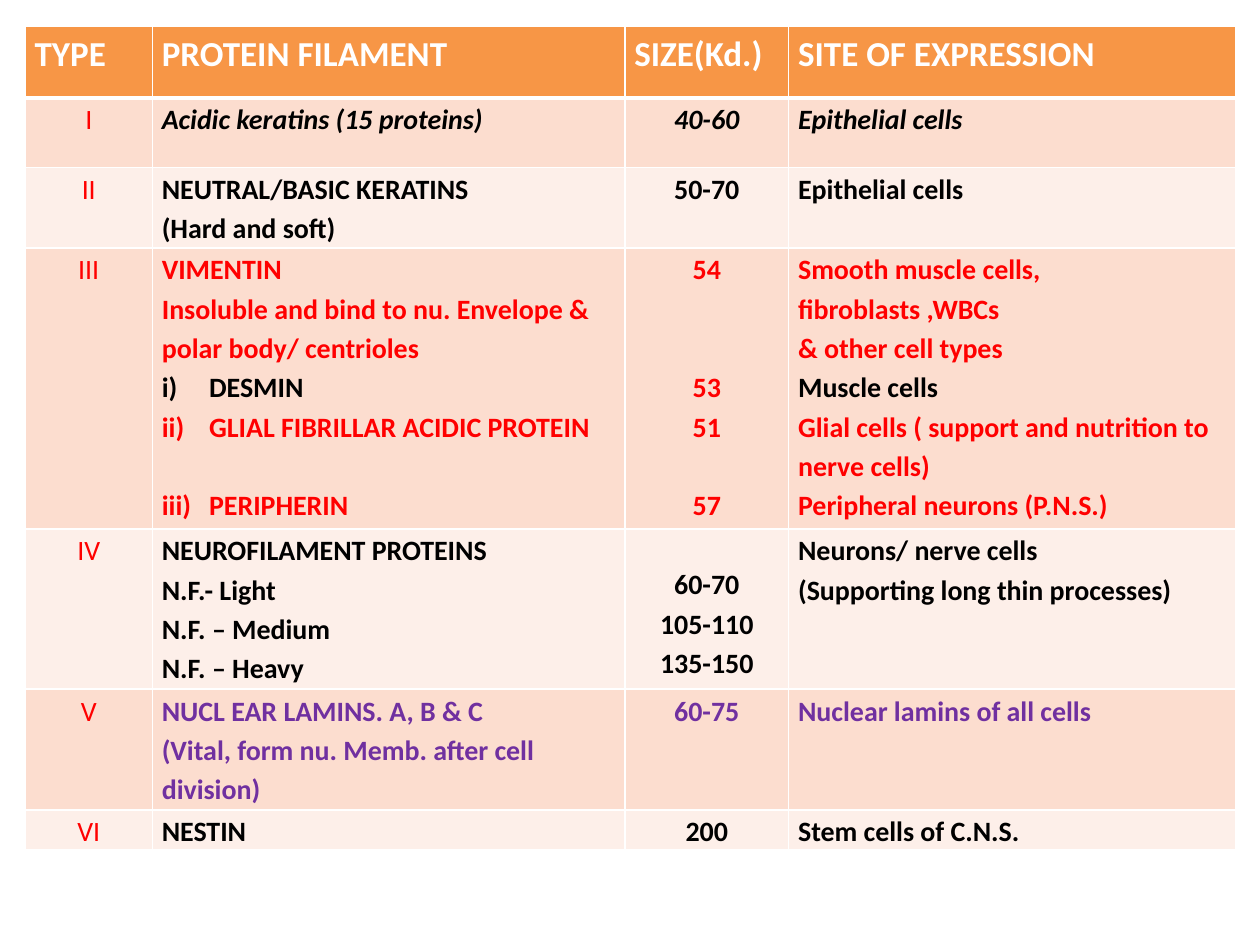
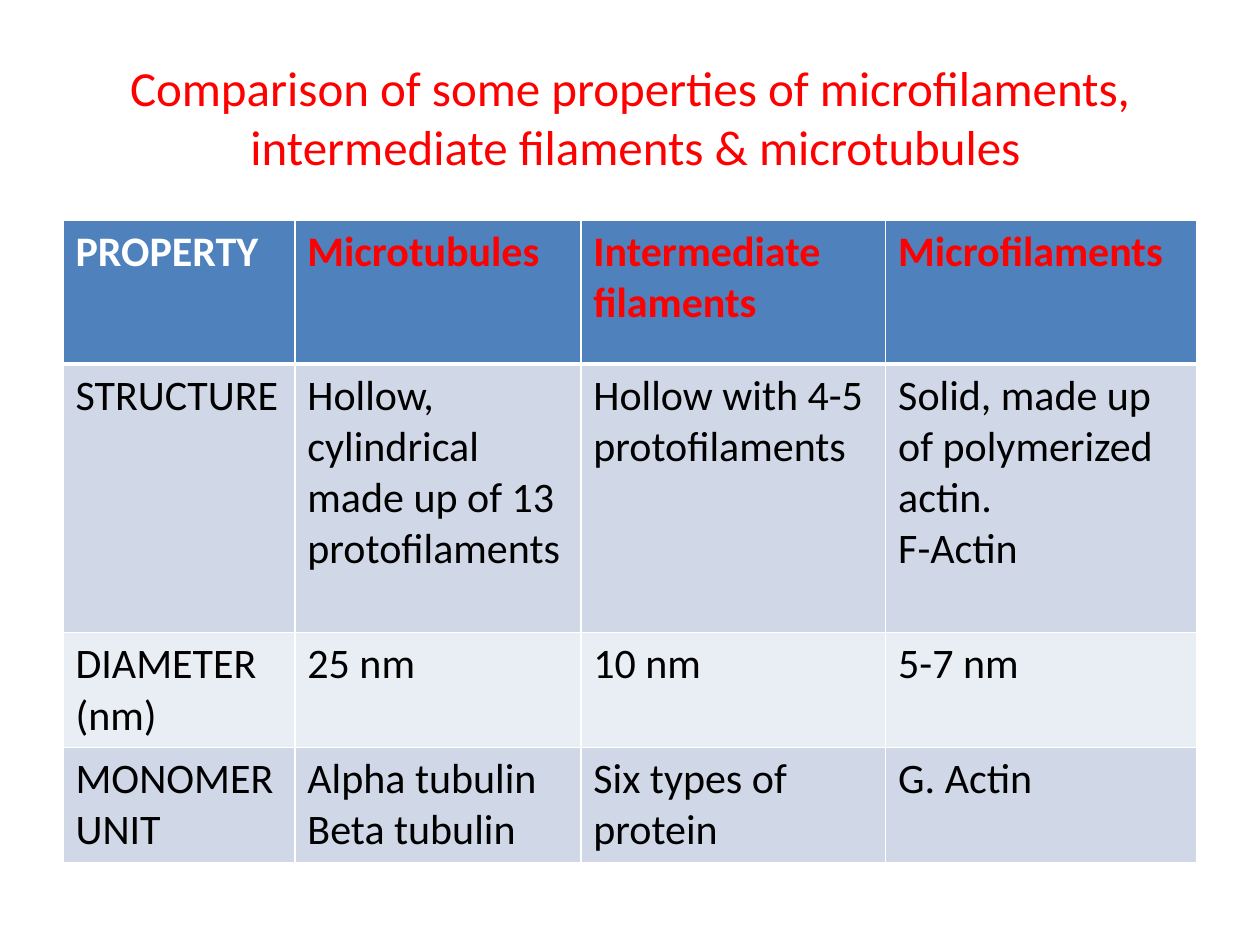
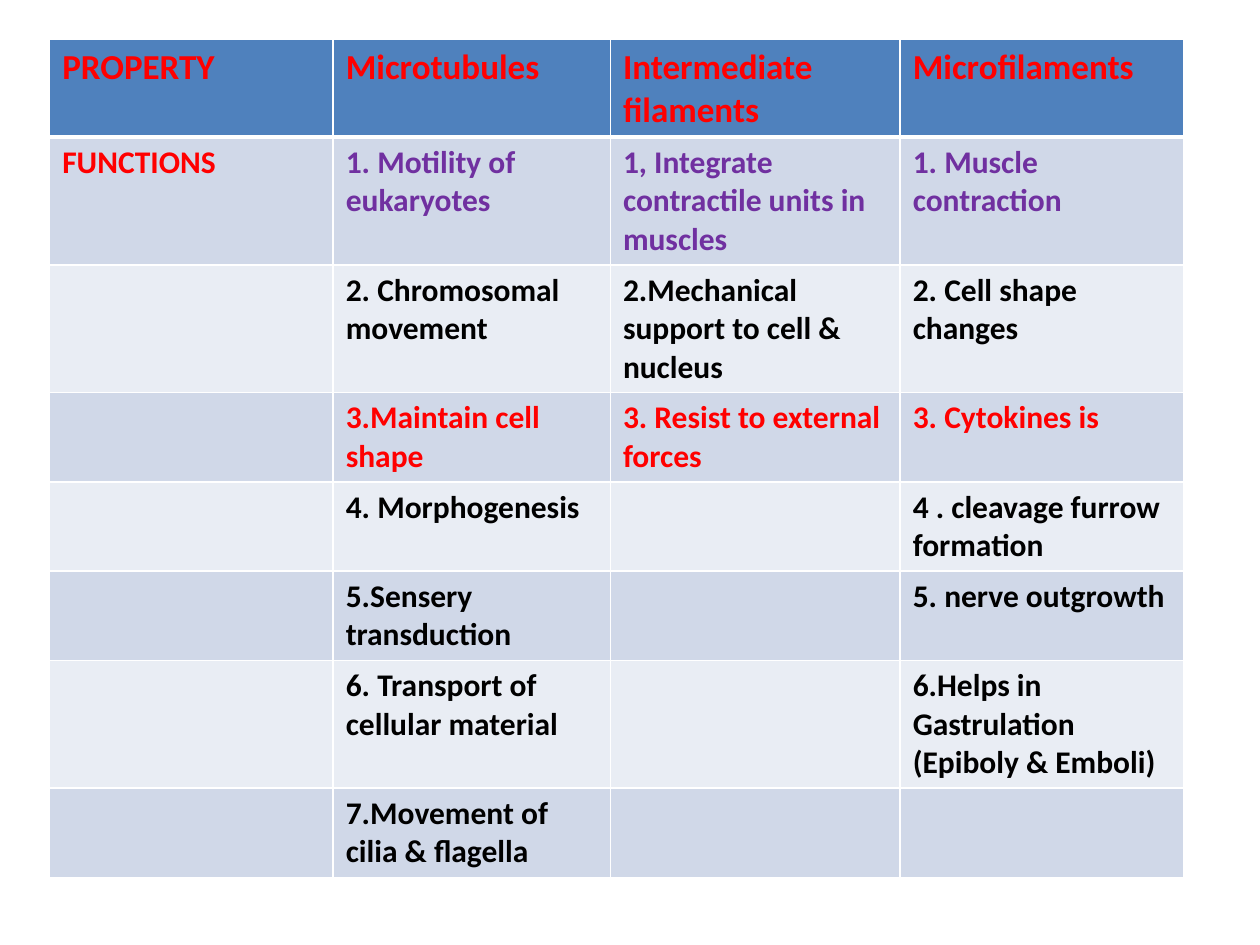
from lxml import etree
from pptx import Presentation
from pptx.dml.color import RGBColor as RGB
from pptx.enum.text import MSO_ANCHOR as ANCHOR, PP_ALIGN as ALIGN
from pptx.oxml.ns import qn
from pptx.util import Pt


class Theme:
    font = "Calibri"
    white, black, red, purple = "FFFFFF", "000000", "FF0000", "7030A0"
    orange, orange_bands = "F79646", ("FCDDCF", "FDEFE9")
    blue, blue_bands = "4F81BD", ("D0D8E8", "E9EDF4")
    title_size = 28
    thin, thick = 1, 3


T = Theme
LINE = 22.5  # height of one line of the filament type table
NUMBERED = {"numbered": True}

# A row is (height, colour, cells). A cell is a string or a list of paragraphs,
# and a paragraph is a string or (string, format values).
FILAMENT_TYPES = {
    "at": (14.4, 15.1), "cols": (72.7, 270, 93.6, 255.6),
    "head_fill": T.orange, "bands": T.orange_bands,
    "head_size": 20, "size": 16, "bold": True, "spacing": 1.15,
    "margins": (5.4, 0),
    "col_formats": {0: {"align": ALIGN.CENTER, "bold": False, "italic": False, "color": T.red},
                    2: {"align": ALIGN.CENTER}},
    "rows": [
        (41, T.white, ["TYPE", "PROTEIN FILAMENT", "SIZE(Kd.)", "SITE OF EXPRESSION"]),
        (39.6, T.black, ["I",
                         [("Acidic keratins (15 proteins)", {"italic": True})],
                         [("40-60", {"italic": True})],
                         [("Epithelial cells", {"italic": True})]]),
        (46, T.black, ["II", ["NEUTRAL/BASIC KERATINS", "(Hard and soft)"],
                       "50-70", "Epithelial cells"]),
        (160.6, T.red, [
            "III",
            ["VIMENTIN",
             "Insoluble and bind to nu. Envelope & polar body/ centrioles",
             ("DESMIN", {"color": T.black, **NUMBERED}),
             ("GLIAL FIBRILLAR ACIDIC PROTEIN", NUMBERED),
             ("PERIPHERIN", {"before": LINE, **NUMBERED})],
            ["54", ("53", {"before": 2 * LINE}), "51", ("57", {"before": LINE})],
            ["Smooth muscle cells,\vfibroblasts ,WBCs",
             "& other cell types",
             ("Muscle cells", {"color": T.black}),
             "Glial cells ( support and nutrition to nerve cells)",
             "Peripheral neurons (P.N.S.)"]]),
        (91.6, T.black, [
            "IV",
            ["NEUROFILAMENT PROTEINS", "N.F.- Light", "N.F. – Medium", "N.F. – Heavy"],
            ["60-70", "105-110", "135-150"],
            ["Neurons/ nerve cells", "(Supporting long thin processes)"]]),
        (69, T.purple, [
            "V",
            ["NUCL EAR LAMINS. A, B & C", "(Vital, form nu. Memb. after cell division)"],
            "60-75", "Nuclear lamins of all cells"]),
        (23, T.black, ["VI", "NESTIN", "200", "Stem cells of C.N.S."]),
    ],
    "top_margins": {(4, 2): 19.5},
}

TITLE = "Comparison of some properties of microfilaments,\v intermediate filaments & microtubules"
KINDS = ["Microtubules", "Intermediate filaments", "Microfilaments"]
BLUE_TABLE = {"head_fill": T.blue, "bands": T.blue_bands, "margins": (7.2, 3.6)}

PROPERTIES = {
    **BLUE_TABLE,
    "at": (36, 126), "cols": (132.5, 163.4, 174.2, 177.9),
    "head_size": 24, "size": 24, "bold": False,
    "rows": [
        (82, T.red, [[("PROPERTY", {"color": T.white})], *KINDS]),
        (153.5, T.black, ["STRUCTURE",
                          "Hollow, cylindrical made up of 13 protofilaments",
                          "Hollow with 4-5 protofilaments",
                          ["Solid, made up of polymerized actin.", "F-Actin"]]),
        (65.7, T.black, ["DIAMETER (nm)", "25 nm", "10 nm", "5-7 nm"]),
        (65.7, T.black, ["MONOMER UNIT", ["Alpha tubulin", "Beta tubulin"],
                         "Six types of protein", "G. Actin"]),
    ],
}

FUNCTIONS = {
    **BLUE_TABLE,
    "at": (28.4, 22.6), "cols": (162, 158.4, 165.6, 162),
    "head_size": 20, "size": 18, "bold": True,
    "rows": [
        (55.8, T.red, ["PROPERTY", *KINDS]),
        (73, T.purple, [[("FUNCTIONS", {"color": T.red})],
                        "1. Motility of eukaryotes",
                        "1, Integrate contractile units in muscles",
                        "1. Muscle contraction"]),
        (73, T.black, ["", "2. Chromosomal movement",
                       "2.Mechanical support to cell & nucleus",
                       "2. Cell shape changes"]),
        (51, T.red, ["", "3.Maintain cell shape", "3. Resist to external forces",
                     "3. Cytokines is"]),
        (51, T.black, ["", "4. Morphogenesis", "", "4 . cleavage furrow formation"]),
        (51, T.black, ["", "5.Sensery transduction", "", "5. nerve outgrowth"]),
        (73, T.black, ["", "6. Transport of cellular material", "",
                       "6.Helps in Gastrulation (Epiboly & Emboli)"]),
        (51, T.black, ["", "7.Movement of cilia & flagella", "", ""]),
    ],
}


def add_roman_number(p):
    pPr = p._p.get_or_add_pPr()
    for name, value in {"marL": 27, "indent": -27}.items():
        pPr.set(name, str(Pt(value)))
    etree.SubElement(pPr, qn("a:buFont"), typeface="+mj-lt")
    etree.SubElement(pPr, qn("a:buAutoNum"), type="romanLcParenR")


def write_paragraph(p, text, fmt):
    p.text = text
    p.alignment = fmt.get("align", ALIGN.LEFT)
    for name, key in {"line_spacing": "spacing", "space_before": "before"}.items():
        if key in fmt:
            setattr(p, name, Pt(fmt[key]) if key == "before" else fmt[key])
    if fmt.get("numbered"):
        add_roman_number(p)
    values = {"name": T.font, "size": Pt(fmt["size"]),
              "bold": fmt.get("bold", False), "italic": fmt.get("italic", False)}
    for r in p.runs:
        for name, value in values.items():
            setattr(r.font, name, value)
        r.font.color.rgb = RGB.from_string(fmt["color"])


def write_cell(cell, content, fmt):
    tf = cell.text_frame
    for i, item in enumerate([content] if isinstance(content, str) else content):
        text, own = (item, {}) if isinstance(item, str) else item
        p = tf.add_paragraph() if i else tf.paragraphs[0]
        write_paragraph(p, text, {**fmt, **own})


def set_borders(cell, top, bottom):
    tcPr = cell._tc.get_or_add_tcPr()
    for side, width in {"L": T.thin, "R": T.thin, "T": top, "B": bottom}.items():
        ln = etree.SubElement(tcPr, qn(f"a:ln{side}"), w=str(Pt(width)))
        fill = etree.SubElement(ln, qn("a:solidFill"))
        etree.SubElement(fill, qn("a:srgbClr"), val=T.white)


def add_table(s, data):
    rows, cols = data["rows"], data["cols"]
    size = sum(cols), sum(row[0] for row in rows)
    table = s.shapes.add_table(len(rows), len(cols), *map(Pt, data["at"] + size)).table
    for column, width in zip(table.columns, cols):
        column.width = Pt(width)
    side, edge = data["margins"]
    for y, (height, color, cells) in enumerate(rows):
        table.rows[y].height = Pt(height)
        head = y == 0
        base = {"color": color, "size": data["head_size" if head else "size"],
                "bold": head or data["bold"], "spacing": data.get("spacing", 1.0)}
        for x, content in enumerate(cells):
            cell = table.cell(y, x)
            margins = {"left": side, "right": side, "bottom": edge,
                       "top": data.get("top_margins", {}).get((y, x), edge)}
            for name, value in margins.items():
                setattr(cell, f"margin_{name}", Pt(value))
            set_borders(cell, T.thick if y == 1 else T.thin, T.thick if head else T.thin)
            cell.fill.solid()
            fill = data["head_fill"] if head else data["bands"][(y - 1) % 2]
            cell.fill.fore_color.rgb = RGB.from_string(fill)
            own = {} if head else data.get("col_formats", {}).get(x, {})
            write_cell(cell, content, {**base, **own})


def add_title(s, text):
    tf = s.shapes.add_textbox(*map(Pt, (36, 21.6, 648, 90))).text_frame
    tf.word_wrap = True
    tf.vertical_anchor = ANCHOR.MIDDLE
    write_paragraph(tf.paragraphs[0], text,
                    {"align": ALIGN.CENTER, "size": T.title_size, "color": T.red})


def main():
    prs = Presentation()
    prs.slide_width, prs.slide_height = Pt(720), Pt(540)
    for title, data in [(None, FILAMENT_TYPES), (TITLE, PROPERTIES), (None, FUNCTIONS)]:
        s = prs.slides.add_slide(prs.slide_layouts[6])
        if title:
            add_title(s, title)
        add_table(s, data)
    prs.save("out.pptx")


if __name__ == "__main__":
    main()
